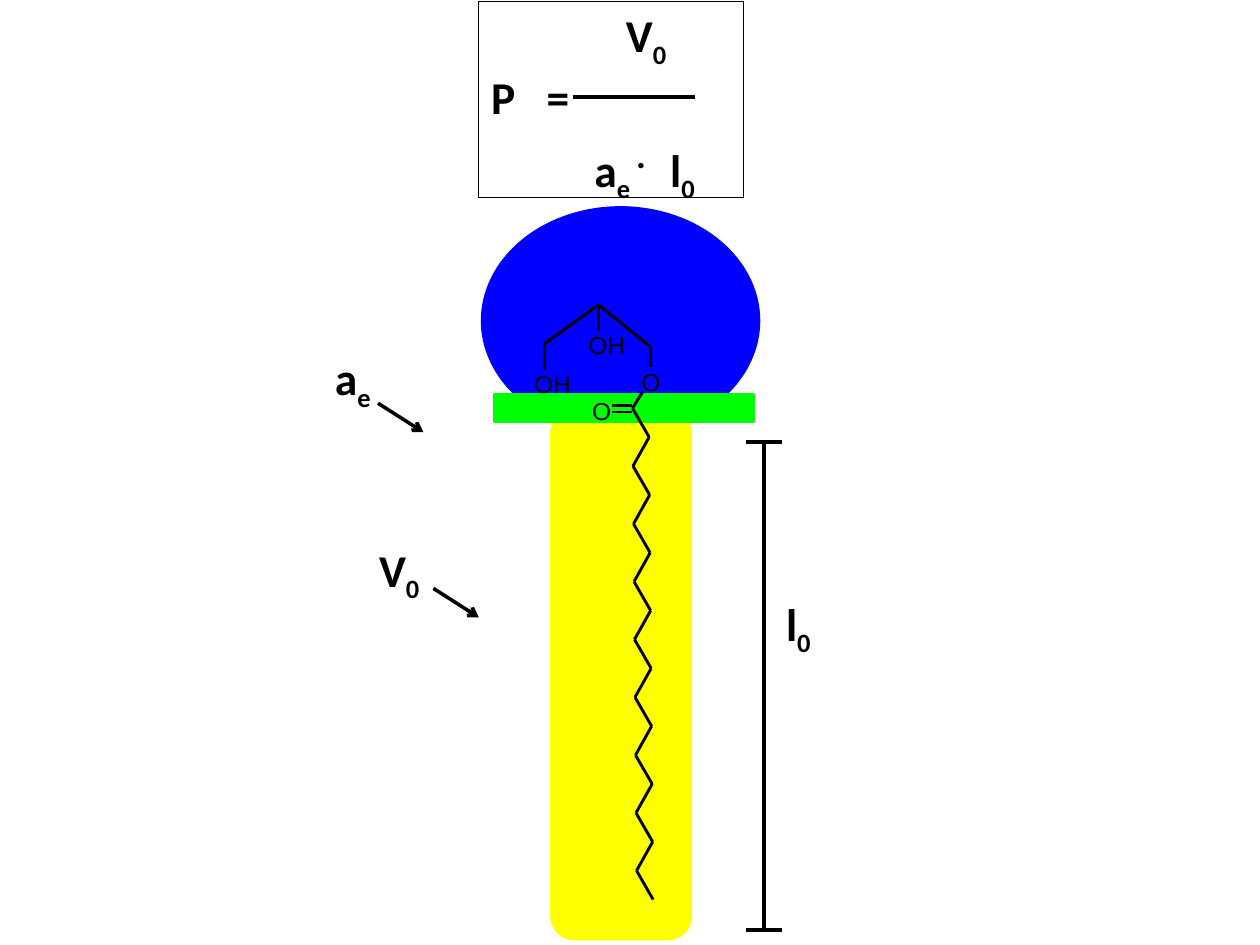
from lxml import etree
from pptx import Presentation
from pptx.dml.color import RGBColor
from pptx.enum.shapes import MSO_CONNECTOR, MSO_SHAPE
from pptx.enum.text import MSO_ANCHOR, MSO_AUTO_SIZE, PP_ALIGN
from pptx.oxml.ns import qn
from pptx.util import Inches, Pt

COLORS = {
    "ink": "000000",
    "head": "0000FF",
    "interface": "00FF00",
    "tail": "FFFF00",
}
BOND = 1.63


def rgb(name):
    return RGBColor.from_string(COLORS[name])


def add_line(s, x1, y1, x2, y2, width=2, arrow=False):
    c = s.shapes.add_connector(
        MSO_CONNECTOR.STRAIGHT, Inches(x1), Inches(y1), Inches(x2), Inches(y2))
    c.line.color.rgb = rgb("ink")
    c.line.width = Pt(width)
    if arrow:
        etree.SubElement(c.line._get_or_add_ln(), qn("a:tailEnd"), type="arrow")
    etree.SubElement(c._element.spPr, qn("a:effectLst"))


def add_block(s, kind, x, y, w, h, color):
    sp = s.shapes.add_shape(kind, Inches(x), Inches(y), Inches(w), Inches(h))
    sp.shadow.inherit = False
    sp.fill.solid()
    sp.fill.fore_color.rgb = rgb(color)
    sp.line.color.rgb = rgb(color)
    sp.line.width = Pt(2)


def style_paragraph(p, size=26, name="Calibri", bold=True):
    p.alignment = PP_ALIGN.LEFT
    p.font.size = Pt(size)
    p.font.name = name
    p.font.bold = bold
    p.font.color.rgb = rgb("ink")


def add_run(p, text, baseline=0, size=None):
    r = p.add_run()
    r.text = text
    if baseline:
        r.font._element.set("baseline", str(baseline * 1000))
    if size:
        r.font.size = Pt(size)


def set_tabs(p, stops):
    tabs = etree.SubElement(p._p.get_or_add_pPr(), qn("a:tabLst"))
    for stop in stops:
        etree.SubElement(tabs, qn("a:tab"), pos=str(Inches(stop)), algn="l")


def add_label(s, x, y, w, h, symbol, index):
    tb = s.shapes.add_textbox(Inches(x), Inches(y), Inches(w), Inches(h))
    tf = tb.text_frame
    tf.word_wrap = True
    p = tf.paragraphs[0]
    style_paragraph(p)
    add_run(p, symbol)
    add_run(p, index, -25)


def add_atom(s, x, y, symbol):
    tb = s.shapes.add_textbox(Inches(x), Inches(y), Inches(0.23), Inches(0.26))
    tf = tb.text_frame
    tf.margin_left = tf.margin_right = tf.margin_top = tf.margin_bottom = 0
    tf.word_wrap = False
    tf.auto_size = MSO_AUTO_SIZE.SHAPE_TO_FIT_TEXT
    p = tf.paragraphs[0]
    p.text = symbol
    style_paragraph(p, 14, "Arial", False)


def add_formula(s, x, y, w, h):
    sp = s.shapes.add_shape(
        MSO_SHAPE.RECTANGLE, Inches(x), Inches(y), Inches(w), Inches(h))
    sp.shadow.inherit = False
    sp.fill.background()
    sp.line.color.rgb = rgb("ink")
    sp.line.width = Pt(0.75)
    tf = sp.text_frame
    tf.word_wrap = True
    tf.vertical_anchor = MSO_ANCHOR.TOP
    rows = [
        ([1.07], [("\tV", 0), ("0", -25)]),
        ([0.44], [("P\t=", 0)]),
        ([0.82, 1.42], [("\ta", 0), ("e ", -25), (".", 30, 36),
                        ("\tl", 0), ("0", -25)]),
    ]
    for i, (stops, runs) in enumerate(rows):
        p = tf.add_paragraph() if i else tf.paragraphs[0]
        style_paragraph(p)
        set_tabs(p, stops)
        for run in runs:
            add_run(p, *run)
    add_line(s, x + 0.75, y + 0.76, x + 1.72, y + 0.76)


def add_surfactant(s, x, y):
    add_block(s, MSO_SHAPE.OVAL, x, y, 2.19, 1.79, "head")
    add_block(s, MSO_SHAPE.ROUNDED_RECTANGLE, x + 0.55, y + 1.61, 1.1, 4.19, "tail")
    add_block(s, MSO_SHAPE.RECTANGLE, x + 0.1, y + 1.48, 2.05, 0.21, "interface")


def add_length_bar(s, x, y, w, h):
    add_line(s, x + w / 2, y, x + w / 2, y + h)
    for end in (y, y + h):
        add_line(s, x, end, x + w, end)
    add_label(s, x + 0.22, y + 1.17, 0.44, 0.59, "l", "0")


def add_pointer(s, x, y, w, h, symbol, index, dx, dy):
    add_label(s, x, y, w, h, symbol, index)
    add_line(s, x + dx, y + dy, x + dx + 0.36, y + dy + 0.23, arrow=True)


def add_molecule(s, x, y):
    atoms = [(0.85, 0.49, "O"), (0, 0.51, "O"), (0.15, 0.51, "H"),
             (0.43, 0.2, "O"), (0.58, 0.2, "H"), (0.46, 0.72, "O")]
    for dx, dy, symbol in atoms:
        add_atom(s, x + dx, y + dy, symbol)

    bonds = [
        (0.51, 0, 0.08, 0.31), (0.92, 0.33, 0.51, 0),
        (0.92, 0.33, 0.92, 0.49), (0.08, 0.52, 0.08, 0.31),
        (0.51, 0.21, 0.51, 0), (0.78, 0.82, 0.86, 0.69),
        (0.78, 0.8, 0.62, 0.8), (0.78, 0.85, 0.62, 0.85),
    ]
    chain = [(0.78 + 0.13 * (k % 2) + 0.002 * k, 0.82 + 3.9 * k / 17)
             for k in range(18)]
    bonds += [(*a, *b) for a, b in zip(chain, chain[1:])]
    for x1, y1, x2, y2 in bonds:
        add_line(s, x + x1, y + y1, x + x2, y + y2, BOND)


def main():
    prs = Presentation()
    prs.slide_width = Inches(10)
    prs.slide_height = Inches(7.5)
    s = prs.slides.add_slide(prs.slide_layouts[6])
    add_formula(s, 3.8, 0.01, 2.1, 1.56)
    add_surfactant(s, 3.83, 1.65)
    add_length_bar(s, 5.92, 3.51, 0.29, 3.87)
    add_pointer(s, 2.91, 4.25, 0.75, 0.53, "V", "0", 0.53, 0.42)
    add_pointer(s, 2.56, 2.73, 0.58, 0.59, "a", "e", 0.44, 0.47)
    add_molecule(s, 4.24, 2.42)
    prs.save("out.pptx")


if __name__ == "__main__":
    main()
